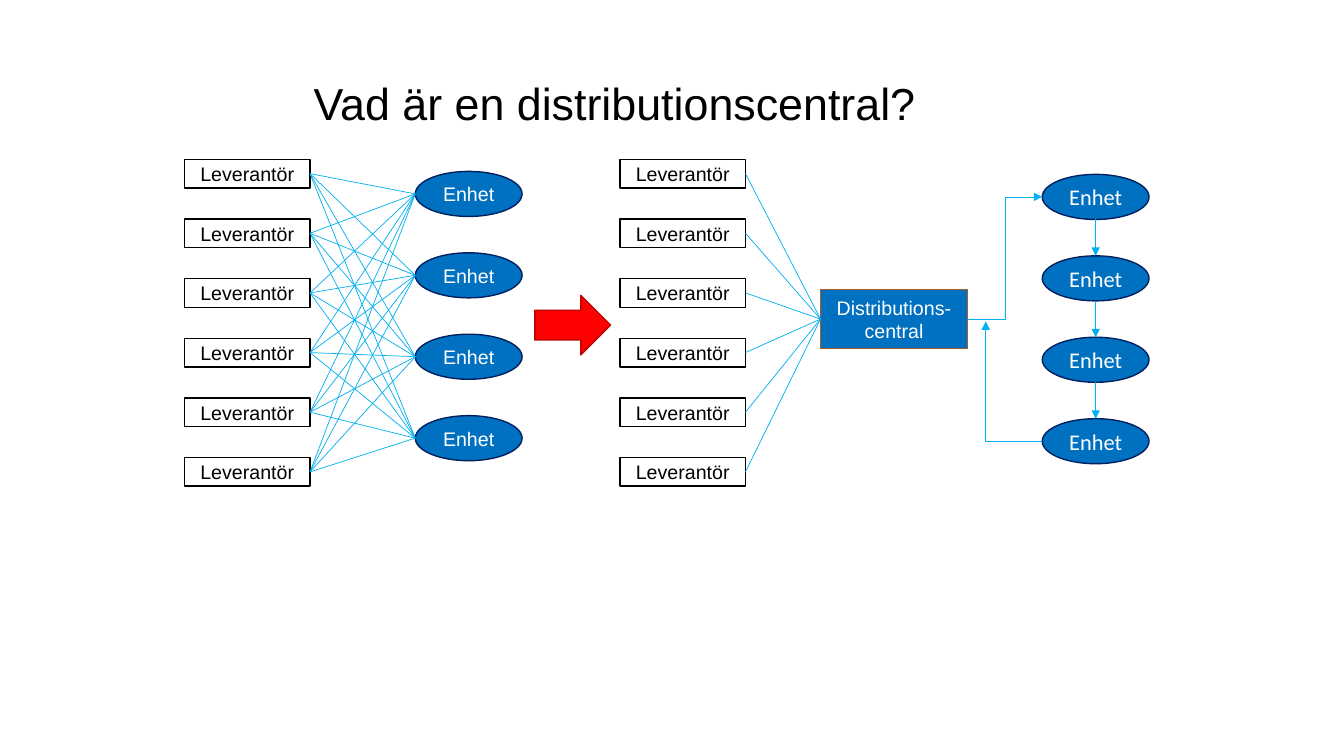
from itertools import pairwise, product

from lxml.etree import SubElement
from pptx import Presentation
from pptx.dml.color import RGBColor
from pptx.enum.shapes import MSO_CONNECTOR, MSO_SHAPE
from pptx.enum.text import MSO_ANCHOR, PP_ALIGN
from pptx.oxml.ns import qn
from pptx.util import Inches, Pt

HUES = {
    "black": "000000", "white": "FFFFFF", "blue": "0070C0", "navy": "002060",
    "sky": "00B0F0", "rust": "AF5C24", "red": "FF0000", "wine": "C00000",
}


class Board:
    """Draws on one slide; all lengths are percent of its width or height."""

    def __init__(self, deck):
        self.deck = deck
        self.slide = deck.slides.add_slide(deck.slide_layouts[5])

    def across(self, share):
        return round(self.deck.slide_width * share / 100)

    def down(self, share):
        return round(self.deck.slide_height * share / 100)

    def hue(self, name):
        return RGBColor.from_string(HUES[name])

    def style(self, par, size, color, face="Arial"):
        par.font.size = Pt(size)
        par.font.name = face
        par.font.color.rgb = self.hue(color)

    def title(self, text, left, top, width, height):
        box = self.slide.shapes.title
        box.left, box.top = self.across(left), self.down(top)
        box.width, box.height = self.across(width), self.down(height)
        frame = box.text_frame
        frame.text = text
        frame.word_wrap = True
        frame.vertical_anchor = MSO_ANCHOR.TOP
        par = frame.paragraphs[0]
        par.alignment = PP_ALIGN.LEFT
        par.line_spacing = 0.9
        par.space_before = Pt(0)
        self.style(par, 32, "black")

    def shape(self, kind, area, fill, edge):
        left, top, width, height = area
        item = self.slide.shapes.add_shape(
            kind, self.across(left), self.down(top), self.across(width), self.down(height))
        item.shadow.inherit = False
        item.fill.solid()
        item.fill.fore_color.rgb = self.hue(fill)
        item.line.color.rgb = self.hue(edge)
        item.line.width = Pt(1)
        return item

    def label(self, item, text, color, size=14, face="Arial"):
        frame = item.text_frame
        frame.text = text
        frame.word_wrap = True
        frame.vertical_anchor = MSO_ANCHOR.MIDDLE
        par = frame.paragraphs[0]
        par.alignment = PP_ALIGN.CENTER
        self.style(par, size, color, face)
        return item

    def firms(self, left):
        """Adds a column of six supplier boxes."""
        return [
            self.label(self.shape(MSO_SHAPE.RECTANGLE, (left, 21.07 + 7.89 * row, 9.34, 3.8),
                                  "white", "black"), "Leverantör", "black")
            for row in range(6)]

    def units(self, left, top, size, face):
        """Adds a column of four unit ovals."""
        return [
            self.label(self.shape(MSO_SHAPE.OVAL, (left, top + 10.77 * row, 7.95, 5.96),
                                  "blue", "navy"), "Enhet", "white", size, face)
            for row in range(4)]

    def link(self, start, end, kind=MSO_CONNECTOR.STRAIGHT, arrow=False):
        line = self.slide.shapes.add_connector(kind, *start, *end)
        line.line.color.rgb = self.hue("sky")
        line.line.width = Pt(0.5)
        if arrow:
            SubElement(line.line._get_or_add_ln(), qn("a:tailEnd"), type="triangle")
        SubElement(line._element.spPr, qn("a:effectLst"))
        return line


def side(item, across, down):
    """Point on an item, as fractions of its width and height."""
    return round(item.left + item.width * across), round(item.top + item.height * down)


def main():
    deck = Presentation()
    deck.slide_width, deck.slide_height = Inches(13.333), Inches(7.5)
    board = Board(deck)
    board.title("Vad är en distributionscentral?", 22.58, 10.13, 56.4, 8.93)

    firms = board.firms(13.73)
    units = board.units(30.9, 22.67, 14, "Arial")
    for unit, firm in product(units, firms):
        line = board.link(side(firm, 1, 0.5), side(unit, 0, 0.5))
        line.begin_connect(firm, 3)

    board.shape(MSO_SHAPE.RIGHT_ARROW, (39.8, 39.07, 5.63, 7.87), "red", "wine")

    firms = board.firms(46.13)
    hub = board.shape(MSO_SHAPE.RECTANGLE, (61.05, 38.27, 10.95, 7.87), "blue", "rust")
    board.label(hub, "Distributions-central", "white")
    for firm in firms:
        line = board.link(side(firm, 1, 0.5), side(hub, 0, 0.5))
        line.begin_connect(firm, 3)
        line.end_connect(hub, 1)

    units = board.units(77.55, 23.07, 16, "Calibri")
    for upper, lower in pairwise(units):
        board.link(side(upper, 0.5, 1), side(lower, 0.5, 0), arrow=True)
    board.link(side(hub, 1, 0.5), side(units[0], 0, 0.5), MSO_CONNECTOR.ELBOW, True)
    back = board.link(side(units[-1], 0, 0.5), (board.across(73.35), board.down(42.53)),
                      MSO_CONNECTOR.ELBOW, True)
    back._element.spPr.find(qn("a:prstGeom")).set("prst", "bentConnector2")

    deck.save("out.pptx")


if __name__ == "__main__":
    main()
